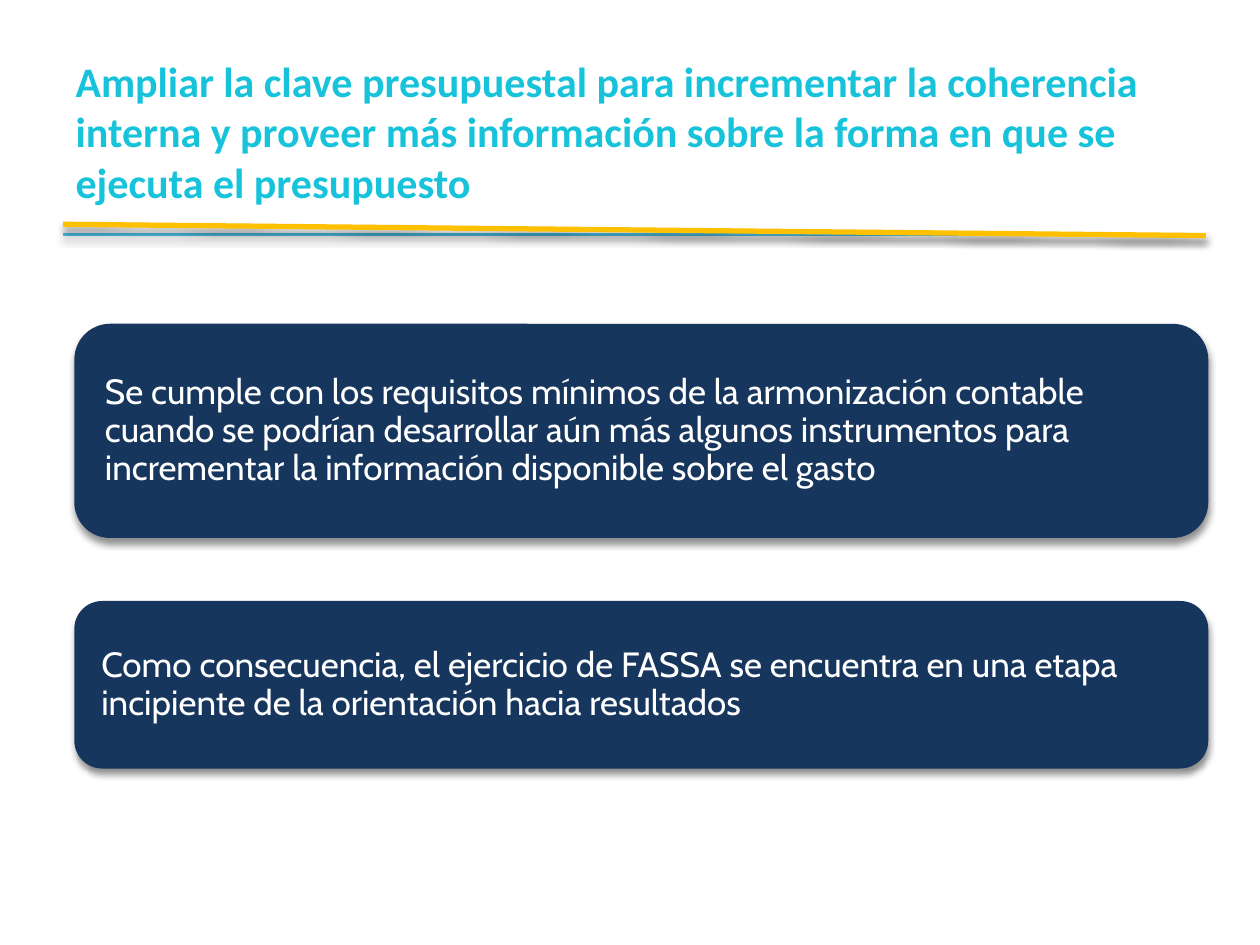
from lxml import etree
from pptx import Presentation
from pptx.dml.color import RGBColor
from pptx.enum.shapes import MSO_CONNECTOR, MSO_SHAPE
from pptx.enum.text import MSO_ANCHOR, PP_ALIGN
from pptx.oxml import parse_xml
from pptx.oxml.ns import nsdecls, qn
from pptx.util import Inches, Pt

COLORS = {
    "title": "16C3DA",
    "panel": "17365D",
    "panel_text": "FFFFFF",
    "blue_rule": "48BCE0",
    "yellow_rule": "FFC000",
    "shadow": "000000",
}


def color(name):
    return RGBColor.from_string(COLORS[name])


def add_shadow(shape):
    """Soft shadow straight below; call after fill and line are set."""
    properties = shape._element.spPr
    for effects in properties.findall(qn("a:effectLst")):
        properties.remove(effects)
    effects = etree.SubElement(properties, qn("a:effectLst"))
    effects.append(parse_xml(
        f'<a:outerShdw {nsdecls("a")} blurRad="{Pt(4)}" dist="{Pt(3)}" '
        'dir="5400000" rotWithShape="0">'
        f'<a:srgbClr val="{COLORS["shadow"]}"><a:alpha val="43000"/></a:srgbClr>'
        '</a:outerShdw>'))


prs = Presentation()
prs.slide_width, prs.slide_height = Inches(10), Inches(7.5)
slide = prs.slides.add_slide(prs.slide_layouts[5])

# Title
title = slide.shapes.title
title.left, title.top = Inches(0.5), Inches(0.3)
title.width, title.height = Inches(9), Inches(1.48)
title.text_frame.text = (
    "Ampliar la clave presupuestal para incrementar la coherencia interna y "
    "proveer más información sobre la forma en que se ejecuta el presupuesto")
title.text_frame.vertical_anchor = MSO_ANCHOR.MIDDLE
heading = title.text_frame.paragraphs[0]
heading.alignment = PP_ALIGN.LEFT
heading.font.name = "Calibri"
heading.font.size = Pt(24)
heading.font.bold = True
heading.font.color.rgb = color("title")

# Message panels: top, height, side inset, text
messages = [
    (2.57, 1.7, 0.16,
     "Se cumple con los requisitos mínimos de la armonización contable cuando se "
     "podrían desarrollar aún más algunos instrumentos para incrementar la "
     "información disponible sobre el gasto"),
    (4.77, 1.33, 0.15,
     "Como consecuencia, el ejercicio de FASSA se encuentra en una etapa "
     "incipiente de la orientación hacia resultados"),
]
for top, height, inset, message in messages:
    panel = slide.shapes.add_shape(
        MSO_SHAPE.ROUNDED_RECTANGLE,
        Inches(0.59), Inches(top), Inches(9), Inches(height))
    panel.fill.solid()
    panel.fill.fore_color.rgb = color("panel")
    panel.line.fill.background()
    add_shadow(panel)

    frame = panel.text_frame
    frame.word_wrap = True
    frame.vertical_anchor = MSO_ANCHOR.MIDDLE
    frame.margin_left = frame.margin_right = Inches(inset)
    frame.margin_top = frame.margin_bottom = Inches(0.08)
    frame.text = message
    paragraph = frame.paragraphs[0]
    paragraph.alignment = PP_ALIGN.LEFT
    paragraph.line_spacing = 0.9
    paragraph.space_after = Pt(7)
    paragraph.font.name = "Cabin"
    paragraph.font.size = Pt(20)
    paragraph.font.color.rgb = color("panel_text")

# Rules under the title: color, start height, end height, weight
rules = [("blue_rule", 1.86, 1.86, 1.5), ("yellow_rule", 1.78, 1.87, 3)]
for rule_color, start_y, end_y, weight in rules:
    rule = slide.shapes.add_connector(
        MSO_CONNECTOR.STRAIGHT,
        Inches(0.5), Inches(start_y), Inches(9.57), Inches(end_y))
    rule.line.color.rgb = color(rule_color)
    rule.line.width = Pt(weight)
    add_shadow(rule)

prs.save("out.pptx")
